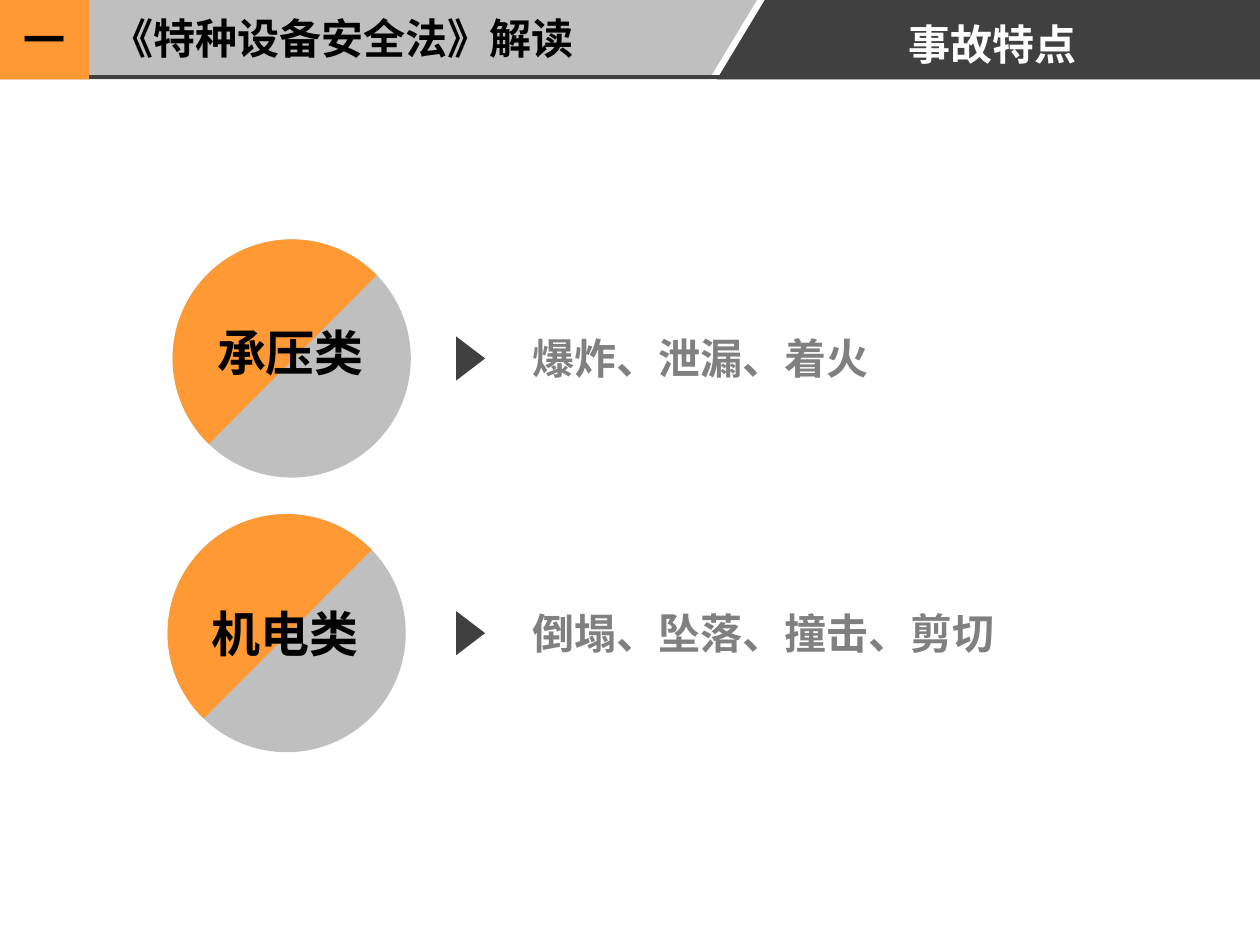
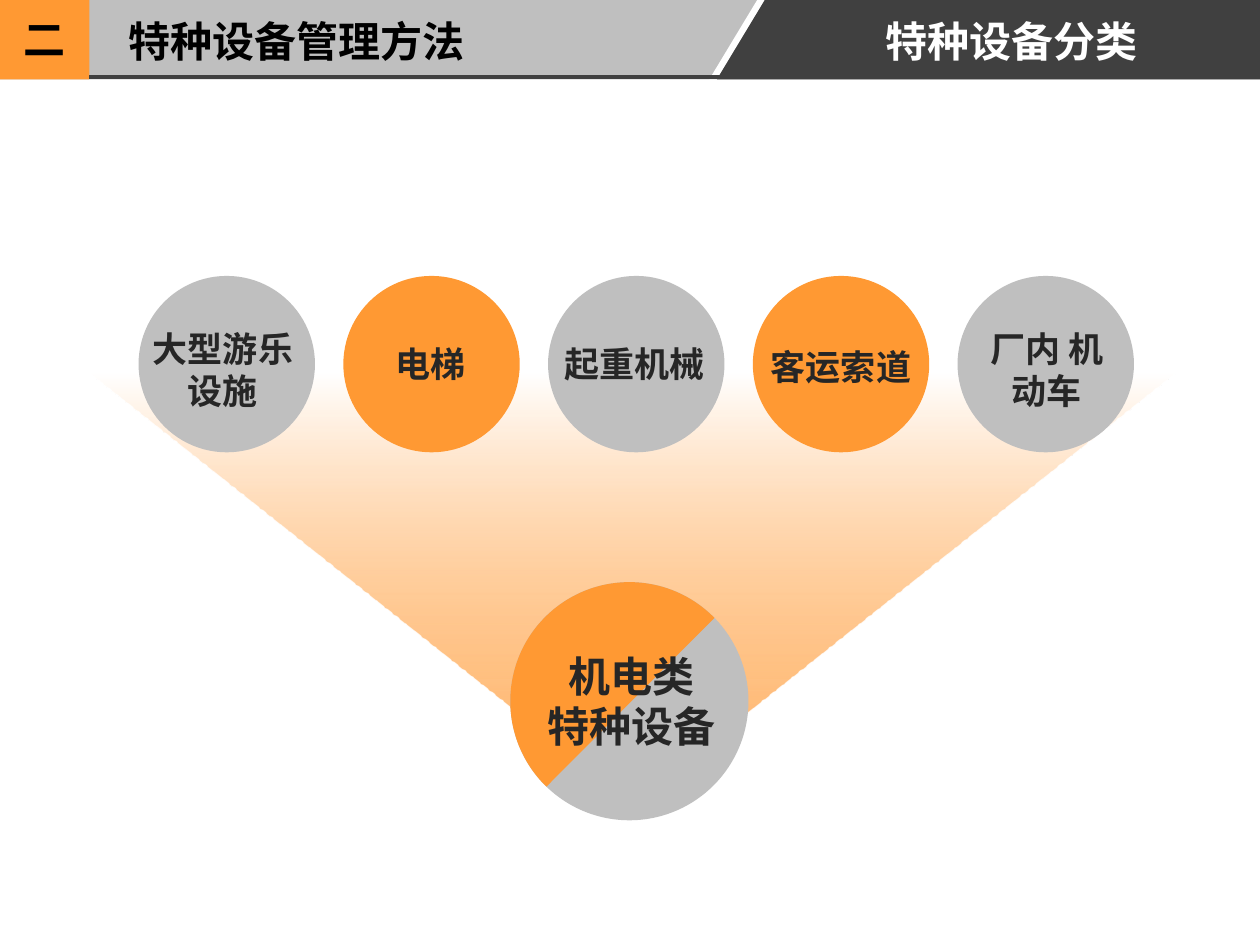
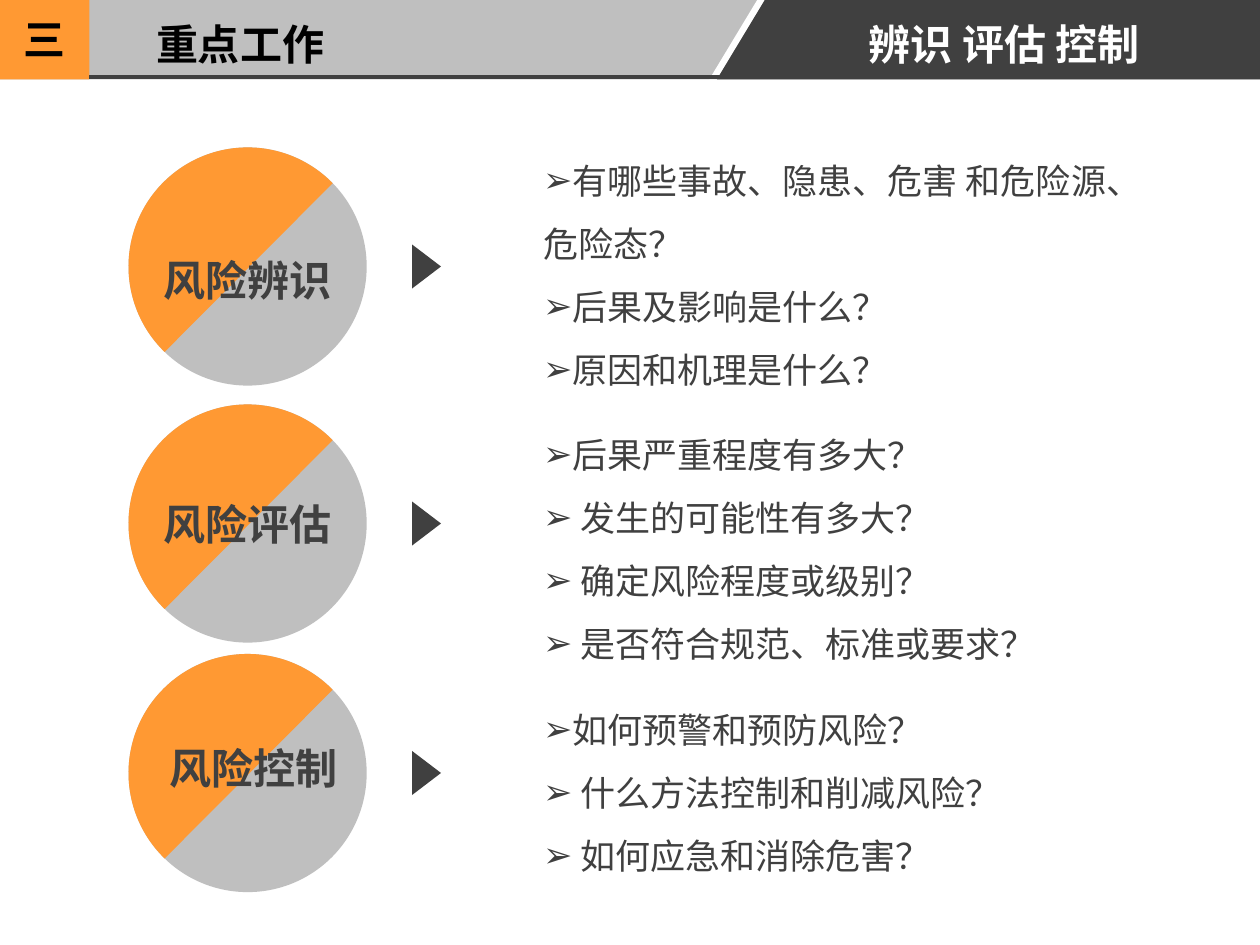
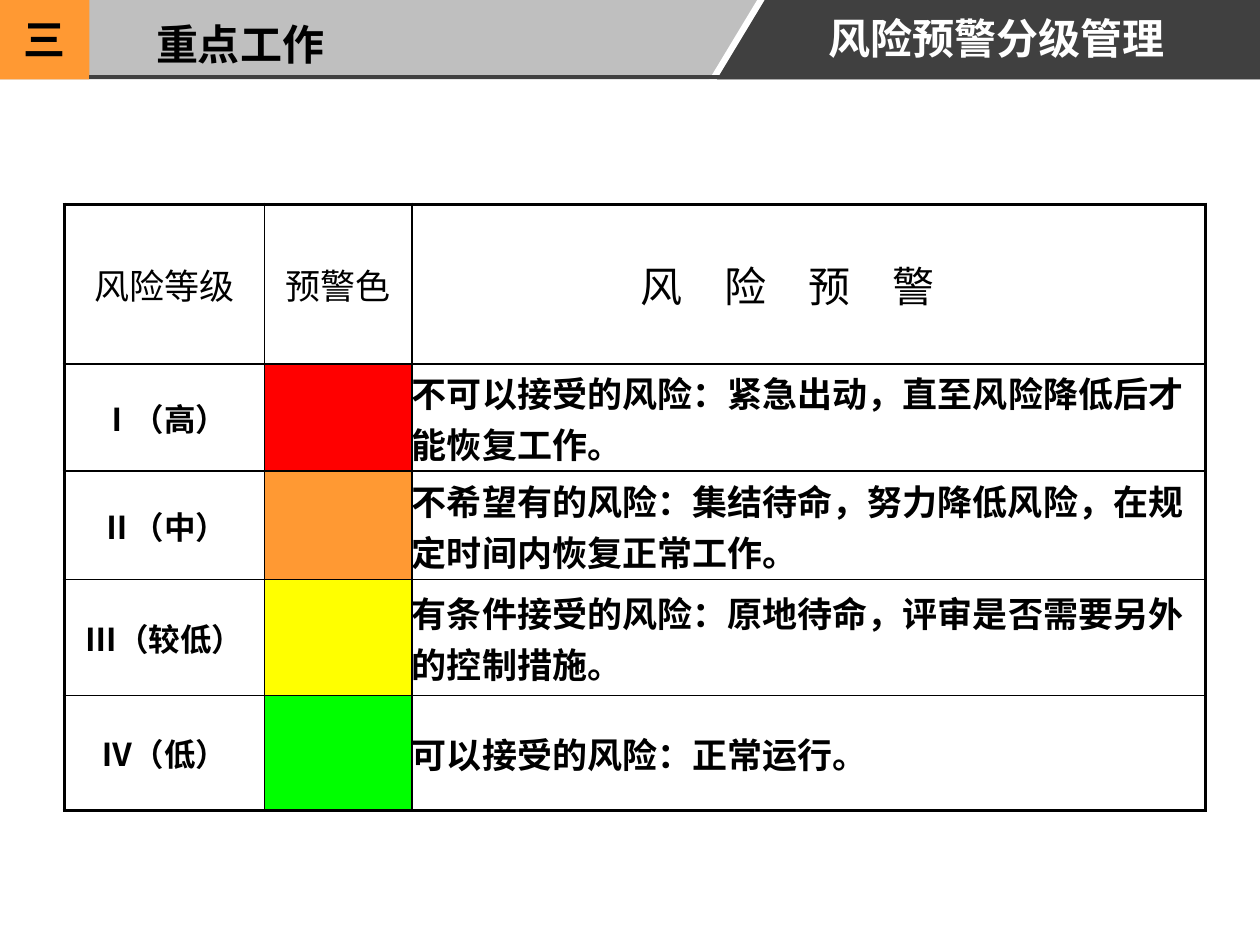
from lxml import etree
from pptx import Presentation
from pptx.dml.color import RGBColor
from pptx.enum.shapes import MSO_CONNECTOR, MSO_SHAPE
from pptx.enum.text import MSO_ANCHOR, MSO_AUTO_SIZE, PP_ALIGN
from pptx.oxml.ns import qn
from pptx.util import Inches, Pt

RECT, OVAL, CHORD = MSO_SHAPE.RECTANGLE, MSO_SHAPE.OVAL, MSO_SHAPE.CHORD
TRIANGLE, TRAPEZOID = MSO_SHAPE.ISOSCELES_TRIANGLE, MSO_SHAPE.TRAPEZOID
STRAIGHT = MSO_CONNECTOR.STRAIGHT
LEFT, CENTER = PP_ALIGN.LEFT, PP_ALIGN.CENTER
TOP, MIDDLE = MSO_ANCHOR.TOP, MSO_ANCHOR.MIDDLE
GROW = MSO_AUTO_SIZE.SHAPE_TO_FIT_TEXT

ORANGE, SILVER, DARK = "FF9933", "BFBFBF", "404040"
WHITE, BLACK, GRAY, INK = "FFFFFF", "000000", "808080", "262626"
SANS, SANS_KR, SERIF = "Noto Sans CJK SC", "Noto Sans CJK KR", "Times New Roman"
EAST_ASIAN = {SERIF: SANS}  # faces whose Chinese letters come from another face

TITLE_ONLY, COMPARISON = 5, 4  # layout numbers in the template
BAND_HEIGHT = 0.63
CIRCLE = 1.89
LABEL_SPACING, LIST_SPACING = 1.0, 1.5
FRAME = {"word_wrap": True, "auto_size": GROW, "vertical_anchor": TOP}


# Formatting helpers
def rgb(color):
    return RGBColor.from_string(color)


def set_all(target, values):
    for name, value in values.items():
        setattr(target, name, value)


def box(*lengths):
    return [Inches(length) for length in lengths]


def place(shape, bounds):
    set_all(shape, dict(zip(("left", "top", "width", "height"), box(*bounds))))


def write(paragraph, text, size, color, bold=True, face=SANS):
    """Add text to a paragraph, setting the Latin and the East Asian face."""
    for i, line in enumerate(text.split("\v")):
        if i:
            paragraph.add_line_break()
        run = paragraph.add_run()
        run.text = line
        set_all(run.font, {"size": Pt(size), "bold": bold, "name": face})
        run.font.color.rgb = rgb(color)
        east_asian = etree.SubElement(run._r.get_or_add_rPr(), qn("a:ea"))
        east_asian.set("typeface", EAST_ASIAN.get(face, face))


def fill_label(shape, text, size, color, align):
    frame = shape.text_frame
    set_all(frame, FRAME)
    paragraph = frame.paragraphs[0]
    set_all(paragraph, {"alignment": align, "line_spacing": LABEL_SPACING, "space_before": Pt(0)})
    write(paragraph, text, size, color)


def add_label(slide, bounds, text, size=24, color=BLACK, align=LEFT):
    fill_label(slide.shapes.add_textbox(*box(*bounds)), text, size, color, align)


def paint(shape, color):
    shape.shadow.inherit = False
    shape.fill.solid()
    shape.fill.fore_color.rgb = rgb(color)
    shape.line.fill.background()
    return shape


def add_solid(shapes, preset, bounds, color):
    return paint(shapes.add_shape(preset, *box(*bounds)), color)


def add_polygon(slide, points, color):
    start, *rest = [box(*point) for point in points]
    builder = slide.shapes.build_freeform(*start)
    builder.add_line_segments(rest, close=True)
    return paint(builder.convert_to_shape(), color)


# Shared header
def add_master_band(slide):
    """Draw the header band and hand it to the slide master."""
    rule = slide.shapes.add_connector(STRAIGHT, *box(0.71, 0.61, 5.81, 0.61))
    rule.line.color.rgb = rgb(DARK)
    rule.line.width = Pt(2)
    etree.SubElement(rule.element.spPr, qn("a:effectLst"))
    h = BAND_HEIGHT
    band = [
        add_solid(slide.shapes, RECT, (0, 0, 10, h), SILVER),
        add_solid(slide.shapes, RECT, (0, 0, 0.71, h), ORANGE),
        add_polygon(slide, [(6.01, 0), (6.07, 0), (5.69, h), (5.63, h)], WHITE),
        add_polygon(slide, [(6.07, 0), (10, 0), (10, h), (5.69, h)], DARK),
        rule,
    ]
    master_tree = slide.slide_layout.slide_master.shapes.element
    for part in band:
        master_tree.append(part.element)


def add_slide(prs, layout, number, section, section_at, topic, topic_at):
    slide = prs.slides.add_slide(prs.slide_layouts[layout])
    if len(prs.slides) == 1:
        add_master_band(slide)
    place(slide.shapes.title, topic_at)
    fill_label(slide.shapes.title, topic, 24, WHITE, CENTER)
    add_label(slide, (0.09, 0.06, 0.54, 0.51), number)
    add_label(slide, section_at, section)
    return slide


# Content elements
def add_split_circle(slide, left, top):
    group = slide.shapes.add_group_shape()
    bounds = (left, top, CIRCLE, CIRCLE)
    add_solid(group.shapes, OVAL, bounds, SILVER)
    half = add_solid(group.shapes, CHORD, bounds, ORANGE)
    half.rotation = 45.6
    half.adjustments[0], half.adjustments[1] = 53.126, 161.999


def add_pointer(slide, left, top):
    add_solid(slide.shapes, TRIANGLE, (left, top, 0.35, 0.23), DARK).rotation = 90


def add_beam(slide, bounds):
    beam = add_solid(slide.shapes, TRAPEZOID, bounds, ORANGE)
    beam.adjustments[0] = 1.264
    beam.element.spPr.find(qn("a:xfrm")).set("flipV", "1")
    beam.fill.gradient()
    beam.fill.gradient_angle = 90
    for stop, position, color in zip(beam.fill.gradient_stops, (0, 0.93), (WHITE, ORANGE)):
        stop.position = position
        stop.color.rgb = rgb(color)
    orange_end = beam.element.spPr.findall(".//" + qn("a:srgbClr"))[-1]
    etree.SubElement(orange_end, qn("a:alpha")).set("val", "64000")


def fill_list(body, bounds, items):
    place(body, bounds)
    frame = body.text_frame
    set_all(frame, FRAME)
    for i, item in enumerate(items):
        paragraph = frame.add_paragraph() if i else frame.paragraphs[0]
        set_all(paragraph, {"alignment": LEFT, "line_spacing": LIST_SPACING, "space_before": Pt(0)})
        properties = paragraph._p.get_or_add_pPr()
        properties.set("marL", "0")
        properties.set("indent", str(Inches(-0.38)))
        etree.SubElement(properties, qn("a:buChar")).set("char", "➢")
        write(paragraph, item, 20, DARK, bold=False)


def set_borders(cell, widths):
    properties = cell._tc.get_or_add_tcPr()
    for side, width in zip("LRTB", widths):
        line = etree.SubElement(properties, qn("a:ln" + side), w=str(Pt(width)))
        solid = etree.SubElement(line, qn("a:solidFill"))
        etree.SubElement(solid, qn("a:srgbClr"), val=BLACK)


def add_warning_table(slide, bounds, columns, heights, rows):
    """Each row holds (runs, alignment, fill) cells; a run is (text, size, bold, face)."""
    table = slide.shapes.add_table(len(rows), len(columns), *box(*bounds)).table
    set_all(table, {"first_row": False, "horz_banding": False})
    for column, width in zip(table.columns, columns):
        column.width = Inches(width)
    for row, height in zip(table.rows, heights):
        row.height = Inches(height)
    margins = dict.fromkeys(("margin_left", "margin_right", "margin_top", "margin_bottom"), 0)
    last_row, last_column = len(rows) - 1, len(columns) - 1
    for r, row in enumerate(rows):
        for c, (runs, align, color) in enumerate(row):
            cell = table.cell(r, c)
            set_all(cell, {**margins, "vertical_anchor": MIDDLE})
            outer = (c == 0, c == last_column, r == 0, r == last_row)
            set_borders(cell, [2 if edge else 1 for edge in outer])
            cell.fill.solid()
            cell.fill.fore_color.rgb = rgb(color)
            paragraph = cell.text_frame.paragraphs[0]
            paragraph.alignment = align
            for text, size, bold, face in runs:
                write(paragraph, text, size, BLACK, bold, face)


# Slides
def build_accidents(prs):
    slide = add_slide(prs, TITLE_ONLY, "一", "《特种设备安全法》解读", (0.79, 0.05, 3.92, 0.51),
                      "事故特点", (6.97, 0.1, 1.81, 0.51))
    classes = [
        ("承压类", 1.37, 1.9, 2.51, "爆炸、泄漏、着火"),
        ("机电类", 1.33, 4.08, 4.74, "倒塌、坠落、撞击、剪切"),
    ]
    for name, left, top, name_top, accidents in classes:
        add_split_circle(slide, left, top)
        add_label(slide, (left - 0.05, name_top, 1.97, 0.57), name, 28, BLACK, CENTER)
        add_pointer(slide, 3.56, top + 0.83)
        add_label(slide, (4.13, top + 0.69, 4.18, 0.51), accidents, 24, GRAY)


def build_categories(prs):
    slide = add_slide(prs, TITLE_ONLY, "二", "特种设备管理方法", (0.92, 0.07, 2.91, 0.51),
                      "特种设备分类", (6.1, 0.07, 3.86, 0.51))
    add_beam(slide, (0.71, 2.96, 8.62, 2.83))
    add_split_circle(slide, 4.05, 4.62)
    add_label(slide, (4.19, 5.11, 1.65, 0.91), "机电类\v特种设备", 24, INK, CENTER)
    equipment = [
        ("大型游乐设施", (1.1, 2.55, 1.34, 0.77)),
        ("电梯", (2.79, 2.67, 1.26, 0.44)),
        ("起重机械", (4.25, 2.67, 1.57, 0.44)),
        ("客运索道", (5.89, 2.69, 1.57, 0.44)),
        ("厂内 机动车", (7.68, 2.55, 1.26, 0.77)),
    ]
    diameter, pitch = 1.4, 1.625
    for i, (name, name_at) in enumerate(equipment):
        color = ORANGE if i % 2 else SILVER
        add_solid(slide.shapes, OVAL, (1.1 + i * pitch, 2.19, diameter, diameter), color)
        add_label(slide, name_at, name, 20, INK, CENTER)


def build_risk_steps(prs):
    slide = add_slide(prs, COMPARISON, "三", "重点工作", (1.14, 0.1, 1.56, 0.51),
                      "辨识 评估 控制", (6.71, 0.1, 2.52, 0.51))
    steps = [
        ("风险辨识", 1.17, (1.19, 1.97), (1.05, 2.06),
         ["有哪些事故、隐患、危害 和危险源、危险态？", "后果及影响是什么？", "原因和机理是什么？"]),
        ("风险评估", 3.21, (1.19, 3.91), (3.22, 2.12),
         ["后果严重程度有多大？", " 发生的可能性有多大？", " 确定风险程度或级别？",
          " 是否符合规范、标准或要求？"]),
        ("风险控制", 5.19, (1.24, 5.84), (5.41, 1.61),
         ["如何预警和预防风险？", " 什么方法控制和削减风险？", " 如何应急和消除危害？"]),
    ]
    bodies = [holder for holder in slide.placeholders if holder.placeholder_format.idx > 0]
    for body, (name, top, name_at, (list_top, list_height), questions) in zip(bodies, steps):
        add_split_circle(slide, 1.02, top)
        add_pointer(slide, 3.21, top + 0.83)
        add_label(slide, (*name_at, 1.55, 0.51), name, 24, DARK, CENTER)
        fill_list(body, (4.21, list_top, 5, list_height), questions)
    for unused in bodies[len(steps):]:
        unused.element.getparent().remove(unused.element)


def build_warning_levels(prs):
    slide = add_slide(prs, TITLE_ONLY, "三", "重点工作", (1.14, 0.1, 1.56, 0.51),
                      "风险预警分级管理", (5.07, 0.05, 5.67, 0.51))
    headings = [("风险等级", 20), ("预警色", 20), ("风　险　预　警　", 24)]
    levels = [
        ("Ⅰ（高）", "FF0000", "不可以接受的风险：", "紧急出动，直至风险降低后才能恢复工作。"),
        ("Ⅱ（中）", ORANGE, "不希望有的风险：", "集结待命，努力降低风险，在规定时间内恢复正常工作。"),
        ("Ⅲ（较低）", "FFFF00", "有条件接受的风险：", "原地待命，评审是否需要另外的控制措施。"),
        ("Ⅳ（低）", "00FF00", "可以接受的风险：", "正常运行。"),
    ]
    rows = [[([(text, size, False, SERIF)], CENTER, WHITE) for text, size in headings]]
    for level, color, risk, response in levels:
        rows.append([
            ([(level, 18, True, SANS)], CENTER, WHITE),
            ([], CENTER, color),
            ([(risk, 20, True, SERIF), (response, 20, True, SANS_KR)], LEFT, WHITE),
        ])
    add_warning_table(slide, (0.51, 1.62, 9.06, 4.81), (1.59, 1.17, 6.3),
                      (1.27, 0.85, 0.86, 0.92, 0.91), rows)


def main():
    prs = Presentation()
    prs.slide_width, prs.slide_height = box(10, 7.5)
    build_accidents(prs)
    build_categories(prs)
    build_risk_steps(prs)
    build_warning_levels(prs)
    prs.save("out.pptx")


if __name__ == "__main__":
    main()
